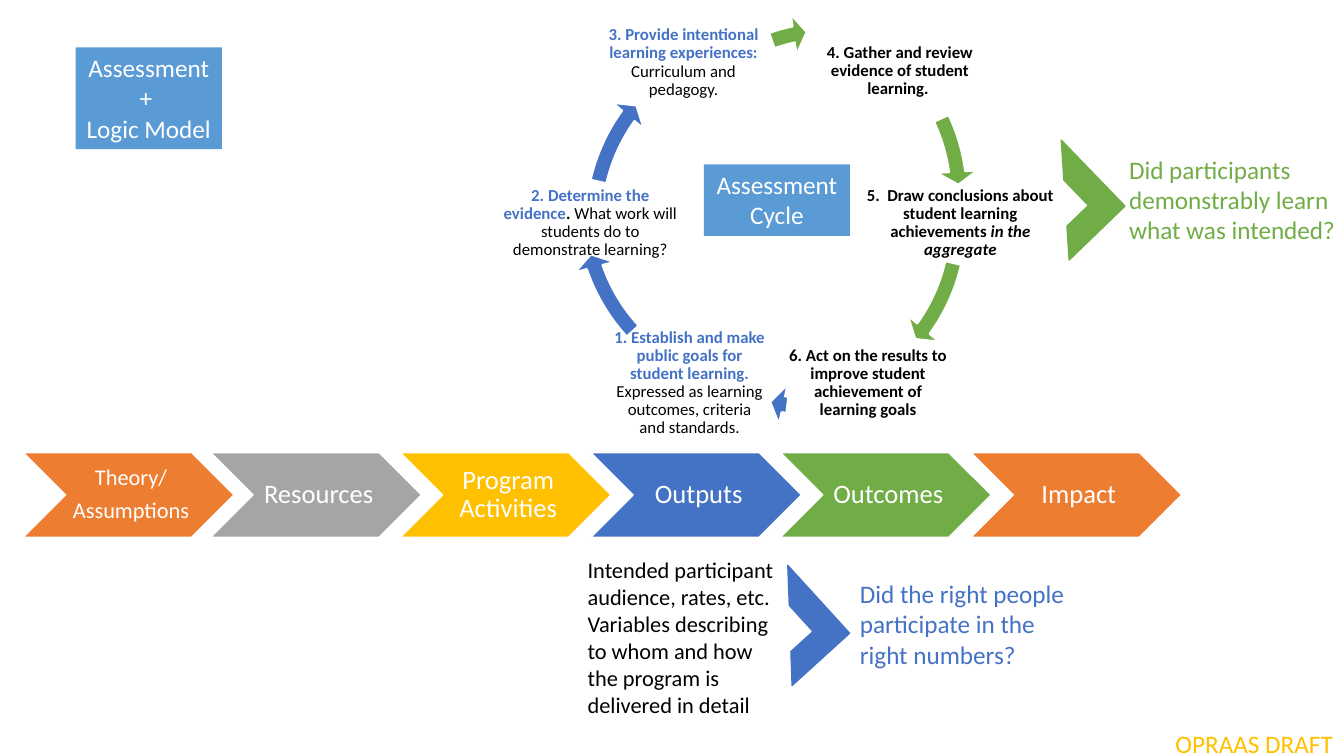
import pptx
import pptx.util
import pptx.dml.color
import pptx.enum.shapes
import pptx.enum.text

Inches = pptx.util.Inches
Pt = pptx.util.Pt
KIND = pptx.enum.shapes.MSO_SHAPE
ALIGN = pptx.enum.text.PP_ALIGN
ANCHOR = pptx.enum.text.MSO_ANCHOR
FIT = pptx.enum.text.MSO_AUTO_SIZE

HUES = {
    "orange": "ED7D31", "gray": "A5A5A5", "gold": "FFC000", "blue": "4472C4",
    "green": "70AD47", "sky": "5B9BD5", "white": "FFFFFF", "black": "000000",
}

CHAIN = [
    (0.23, "orange", ["Theory/", "Assumptions"], 16),
    (2.09, "gray", ["Resources"], 19),
    (3.97, "gold", ["Program Activities"], 19),
    (5.86, "blue", ["Outputs"], 19),
    (7.74, "green", ["Outcomes"], 19),
    (9.63, "orange", ["Impact"], 19),
]

BOLD = {"bold": True}
PLAIN = {"bold": False}
STEPS = [
    ((8, 0.28, 1.85, 0.85),
     [("4. Gather and review evidence of student learning. ", "black", BOLD)]),
    ((8.54, 1.8, 1.97, 0.82),
     [("5.  Draw conclusions about student learning achievements ", "black", BOLD),
      ("in the aggregate", "black", {"bold": True, "italic": True})]),
    ((7.76, 3.39, 1.7, 0.82),
     [("6. Act on the results to improve student achievement of learning goals",
       "black", BOLD)]),
    ((6.07, 3.39, 1.54, 0.82),
     [("1. Establish and make public goals for student learning. ", "blue", BOLD),
      ("Expressed as learning outcomes, criteria and standards.", "black", PLAIN)]),
    ((4.92, 1.8, 1.87, 0.82),
     [("2. Determine the evidence", "blue", BOLD), (". ", "black", BOLD),
      ("What work will students do to demonstrate learning?", "black", PLAIN)]),
    ((5.91, 0.21, 1.74, 0.82),
     [("3. Provide intentional learning experiences: ", "blue", BOLD),
      ("Curriculum and pedagogy.", "black", PLAIN)]),
]

RING = 4.01
ARROWS = [
    (5.7, -0.06, "green", 211.37, 200.83),
    (5.69, 0.2, "green", 21.48, 7.76),
    (6.02, 0.22, "blue", 58.9, 58.12),
    (5.6, 0.06, "blue", 96.65, 82.48),
    (5.69, 0.2, "blue", 129.48, 115.76),
    (6.25, 0.1, "green", 154.65, 150.36),
]

TITLES = [
    ((6.98, 1.63, 1.45, 0.71), ["Assessment Cycle"]),
    ((0.75, 0.47, 1.45, 1.01), ["Assessment + ", "Logic Model"]),
]

FRAMES = [
    ((7.45, 5.75, 0.77, 0.91), 137.7, "blue"),
    ((10.18, 1.53, 0.77, 0.91), 136, "green"),
]

NOTES = [
    ((5.73, 5.47, 2.1, 1.72), "Intended participant audience, rates, etc. Variables "
     "describing to whom and how the program is delivered in detail", "black", 16, True),
    ((8.43, 5.69, 2.39, 1.01),
     "Did the right people participate in the right numbers?", "blue", 18, True),
    ((11.1, 1.48, 2.39, 1.01),
     "Did participants demonstrably learn what was intended?", "green", 18, True),
    ((11.56, 7.18, 1.78, 0.4), "OPRAAS DRAFT", "gold", 18, False),
]

TIGHT = {"line_spacing": 0.9, "space_after": Pt(6), "alignment": ALIGN.CENTER}
MID = {"alignment": ALIGN.CENTER}


def put(obj, vals):
    for name, val in vals.items():
        setattr(obj, name, val)


def tint(hue):
    return pptx.dml.color.RGBColor.from_string(HUES[hue])


def pads(left, rest):
    sides = {"margin_" + side: Inches(rest) for side in ("top", "right", "bottom")}
    return {**sides, "margin_left": Inches(left), "word_wrap": True,
            "vertical_anchor": ANCHOR.MIDDLE}


def draw(slide, kind, box, hue, edge=None, width=1):
    shape = slide.shapes.add_shape(kind, *map(Inches, box))
    shape.shadow.inherit = False
    shape.fill.solid()
    shape.fill.fore_color.rgb = tint(hue)
    if edge:
        shape.line.color.rgb = tint(edge)
        shape.line.width = Pt(width)
    else:
        shape.line.fill.background()
    return shape


def write(shape, paras, size, frame, form):
    text = shape.text_frame
    put(text, frame)
    for i, runs in enumerate(paras):
        para = text.add_paragraph() if i else text.paragraphs[0]
        put(para, form)
        for words, hue, style in runs:
            run = para.add_run()
            run.text = words
            put(run.font, {"name": "Calibri", "size": Pt(size), **style})
            run.font.color.rgb = tint(hue)


def main():
    deck = pptx.Presentation()
    put(deck, {"slide_width": Inches(13.33), "slide_height": Inches(7.5)})
    slide = deck.slides.add_slide(deck.slide_layouts[6])

    for left, hue, lines, size in CHAIN:
        shape = draw(slide, KIND.CHEVRON, (left, 4.49, 2.09, 0.84), hue, "white")
        paras = [[(line, "white", {})] for line in lines]
        write(shape, paras, size, pads(0.05, 0), TIGHT)

    for (box, runs), (left, top, hue, end, start) in zip(STEPS, ARROWS):
        label = slide.shapes.add_textbox(*map(Inches, box))
        write(label, [runs], 12, pads(0.02, 0.02), TIGHT)
        arrow = draw(slide, KIND.CIRCULAR_ARROW, (left, top, RING, RING),
                     hue, "white", 1.5)
        for i, val in enumerate((0.04, 2.5, end, start, 0.05)):
            arrow.adjustments[i] = val

    grow = {"word_wrap": True, "auto_size": FIT.SHAPE_TO_FIT_TEXT}
    for box, lines in TITLES:
        shape = draw(slide, KIND.RECTANGLE, box, "sky")
        paras = [[(line, "white", {})] for line in lines]
        write(shape, paras, 18, {**grow, "vertical_anchor": ANCHOR.TOP}, MID)

    for box, turn, hue in FRAMES:
        draw(slide, KIND.HALF_FRAME, box, hue, hue).rotation = turn

    for box, words, hue, size, wrap in NOTES:
        note = slide.shapes.add_textbox(*map(Inches, box))
        write(note, [[(words, hue, {})]], size, {**grow, "word_wrap": wrap}, {})

    deck.save("out.pptx")


if __name__ == "__main__":
    main()
